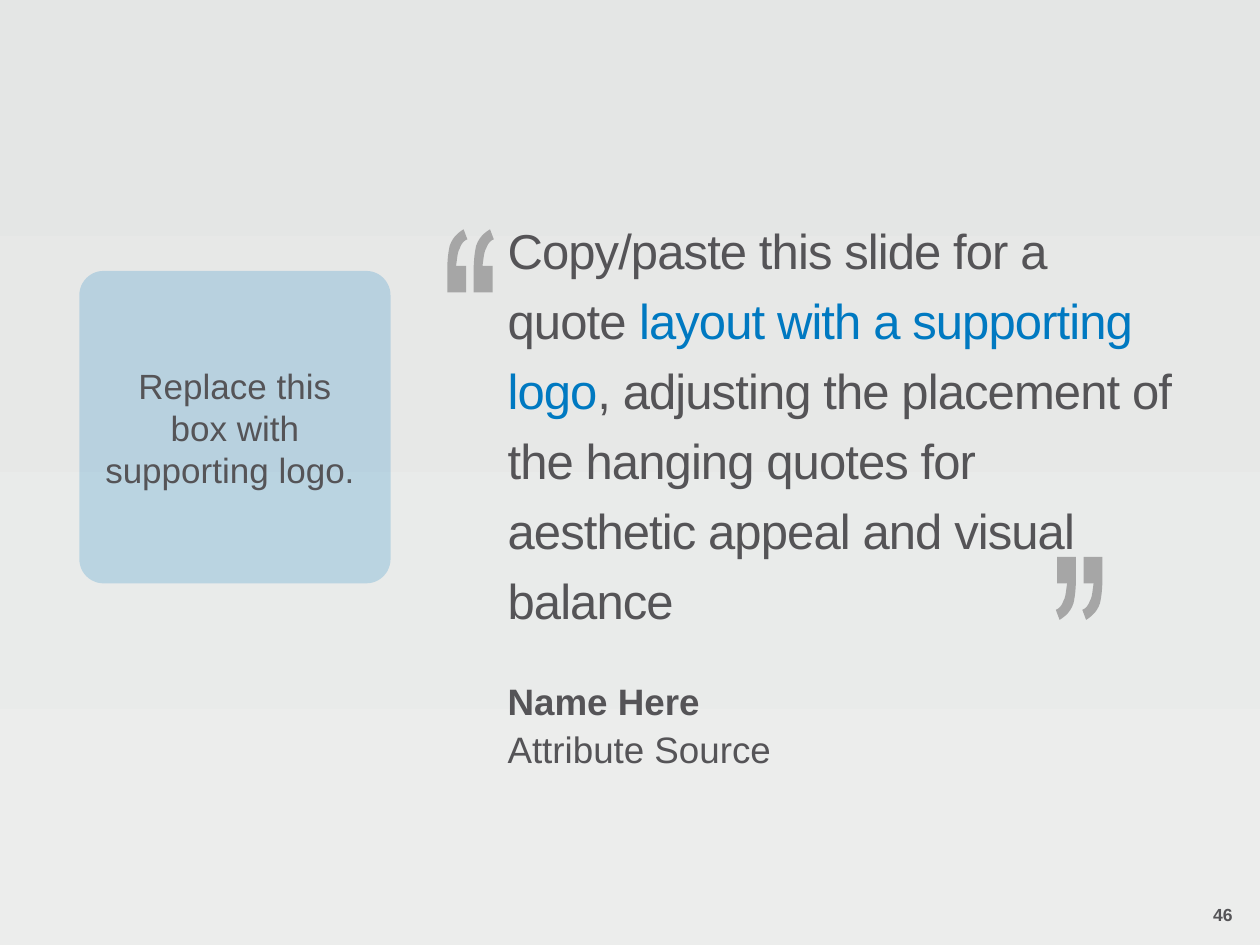
from dataclasses import dataclass

from lxml.etree import SubElement
from pptx import Presentation
from pptx.dml.color import RGBColor
from pptx.enum.shapes import MSO_SHAPE
from pptx.enum.text import MSO_ANCHOR, PP_ALIGN
from pptx.oxml.ns import qn
from pptx.util import Inches, Pt


@dataclass(frozen=True)
class Theme:
    font: str = "Arial"
    ink: str = "555457"
    accent: str = "0079C1"
    mark: str = "A6A6A6"
    top: str = "E4E6E5"
    bottom: str = "ECEDEC"
    quote_size: float = 28
    source_size: float = 21
    logo_size: float = 20
    number_size: float = 10


THEME = Theme()
LINE_BREAK = "\n"


def bezier(start, first, second, end, steps=6):
    """Points along a cubic curve, without its start."""
    for step in range(1, steps + 1):
        t = step / steps
        weights = ((1 - t) ** 3, 3 * t * (1 - t) ** 2, 3 * t * t * (1 - t), t ** 3)
        yield tuple(sum(w * p[axis] for w, p in zip(weights, (start, first, second, end)))
                    for axis in (0, 1))


# Outline of one quotation stroke, in inches from its top left corner
MARK_WIDTH, MARK_HEIGHT, MARK_STEP = 0.16, 0.5, 0.21
MARK_OUTLINE = [
    (0.15, 0.29), (0.15, 0.5), (0, 0.5), (0, 0.33),
    *bezier((0, 0.33), (0, 0.24), (0.01, 0.17), (0.02, 0.13)),
    *bezier((0.02, 0.13), (0.04, 0.07), (0.08, 0.03), (0.13, 0)),
    (0.16, 0.08),
    *bezier((0.16, 0.08), (0.13, 0.09), (0.11, 0.12), (0.1, 0.15)),
    *bezier((0.1, 0.15), (0.08, 0.18), (0.08, 0.23), (0.07, 0.29)),
]


class SlideBuilder:
    def __init__(self, page, theme):
        self.page = page
        self.theme = theme

    def shape(self, kind, left, top, width, height):
        box = self.page.shapes.add_shape(
            kind, Inches(left), Inches(top), Inches(width), Inches(height))
        box.shadow.inherit = False
        box.line.fill.background()
        return box

    def backdrop(self, width, height):
        fill = self.shape(MSO_SHAPE.RECTANGLE, 0, 0, width, height).fill
        fill.gradient()
        fill.gradient_angle = 270
        for stop, color in zip(fill.gradient_stops, (self.theme.top, self.theme.bottom)):
            stop.color.rgb = RGBColor.from_string(color)

    def fill_text(self, box, spans, size, anchor=MSO_ANCHOR.MIDDLE, spacing=None, **formats):
        """Fill a box with one paragraph of (text, font values) spans."""
        frame = box.text_frame
        frame.word_wrap = True
        frame.vertical_anchor = anchor
        para = frame.paragraphs[0]
        for name, value in formats.items():
            setattr(para, name, value)
        for text, values in spans:
            if text == LINE_BREAK:
                para.add_line_break()
                continue
            span = para.add_run()
            span.text = text
            values = {"color": self.theme.ink, **values}
            span.font.color.rgb = RGBColor.from_string(values.pop("color"))
            for name, value in {"name": self.theme.font, "size": Pt(size), **values}.items():
                setattr(span.font, name, value)
            if spacing is not None:
                span.font._element.set("spc", str(round(spacing * 100)))

    def text(self, left, top, width, height, spans, size, **formats):
        box = self.page.shapes.add_textbox(
            Inches(left), Inches(top), Inches(width), Inches(height))
        self.fill_text(box, spans, size, **formats)

    def logo_box(self, left, top, width, height, spans):
        box = self.shape(MSO_SHAPE.ROUNDED_RECTANGLE, left, top, width, height)
        box.adjustments[0] = 0.078
        box.fill.solid()
        box.fill.fore_color.rgb = RGBColor.from_string(self.theme.accent)
        color = box._element.spPr.find(qn("a:solidFill")).find(qn("a:srgbClr"))
        SubElement(color, qn("a:alpha"), val="20000")
        self.fill_text(box, spans, self.theme.logo_size, alignment=PP_ALIGN.CENTER)

    def quote_marks(self, left, top, closing=False):
        """A pair of strokes; the closing pair is turned by half a circle."""
        group = self.page.shapes.add_group_shape()
        for offset in (0, MARK_STEP):
            points = [(MARK_WIDTH - x, MARK_HEIGHT - y) if closing else (x, y)
                      for x, y in MARK_OUTLINE]
            points = [(Inches(left + offset + x), Inches(top + y)) for x, y in points]
            outline = group.shapes.build_freeform(*points[0])
            outline.add_line_segments(points[1:], close=True)
            stroke = outline.convert_to_shape()
            stroke.shadow.inherit = False
            stroke.line.fill.background()
            stroke.fill.solid()
            stroke.fill.fore_color.rgb = RGBColor.from_string(self.theme.mark)


def main():
    deck = Presentation()
    deck.slide_width, deck.slide_height = Inches(10), Inches(7.5)
    slide = SlideBuilder(deck.slides.add_slide(deck.slide_layouts[6]), THEME)

    # Background and page number
    slide.backdrop(10, 7.5)
    slide.text(6.76, 7.12, 3.12, 0.27, [("46", {"bold": True})], THEME.number_size,
               anchor=MSO_ANCHOR.BOTTOM, alignment=PP_ALIGN.RIGHT)

    # Quote and its source
    slide.text(3.93, 1.88, 5.49, 2.89, [
        ("Copy/paste this slide for a quote ", {}),
        ("layout with a supporting logo", {"color": THEME.accent}),
        (", adjusting the placement of the hanging quotes for "
         "aesthetic appeal and visual balance", {}),
    ], THEME.quote_size, spacing=-0.5, line_spacing=Pt(40))
    slide.text(3.93, 5.31, 5.18, 0.86, [
        ("Name Here", {"bold": True}),
        (LINE_BREAK, {}),
        ("Attribute Source", {}),
    ], THEME.source_size, line_spacing=Pt(27))

    # Hanging quotation marks
    slide.quote_marks(3.55, 1.82)
    slide.quote_marks(8.38, 4.42, closing=True)

    # Space for the logo
    slide.logo_box(0.63, 2.15, 2.47, 2.48, [
        ("Replace this", {}),
        (LINE_BREAK, {}),
        ("box with supporting logo. ", {}),
    ])
    deck.save("out.pptx")


if __name__ == "__main__":
    main()
